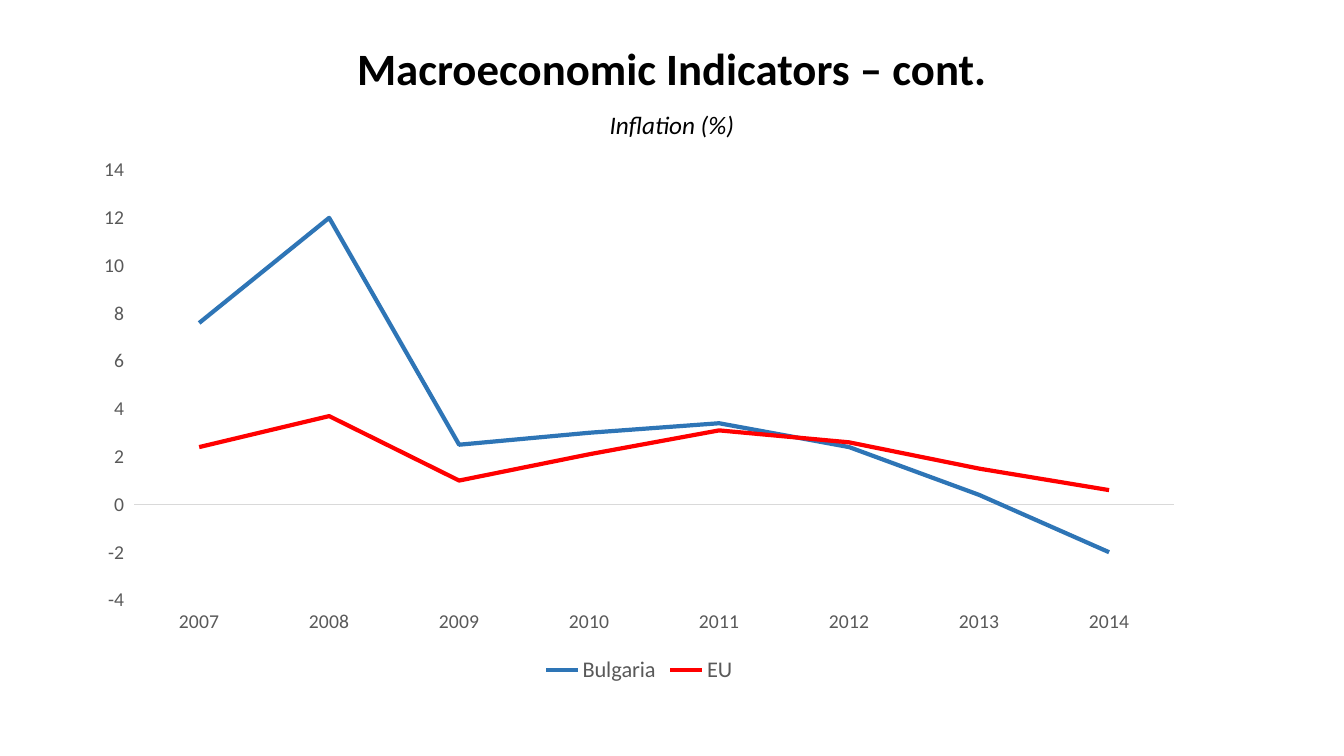
from dataclasses import dataclass

import pptx
import pptx.chart.data
import pptx.dml.color
import pptx.enum.chart
import pptx.enum.text
import pptx.oxml
import pptx.util
from pptx.util import Cm


@dataclass(frozen=True)
class Theme:
    font: str = "Calibri"
    ink: str = "000000"
    label: str = "595959"
    axis: str = "D9D9D9"
    bulgaria: str = "2E75B6"
    eu: str = "FF0000"
    title_size: float = 32
    subtitle_size: float = 18
    axis_size: float = 14
    legend_size: float = 16
    chart_size: float = 10


@dataclass(frozen=True)
class Box:
    left: float
    top: float
    width: float
    height: float


@dataclass(frozen=True)
class Country:
    name: str
    inflation: tuple[float, ...]
    color: str


THEME = Theme()
YEARS = [str(year) for year in range(2007, 2015)]
COUNTRIES = [
    Country("Bulgaria", (7.6, 12, 2.5, 3, 3.4, 2.4, 0.4, -2), THEME.bulgaria),
    Country("EU", (2.4, 3.7, 1, 2.1, 3.1, 2.6, 1.5, 0.6), THEME.eu),
]
TITLE_BOX = Box(2.33, 0.67, 29.21, 2.23)
SUBTITLE_BOX = Box(9.73, 2.77, 14.4, 0.94)
CHART_BOX = Box(2.06, 3.71, 28.09, 13.64)


def rgb(color: str) -> pptx.dml.color.RGBColor:
    return pptx.dml.color.RGBColor.from_string(color)


def format_font(font, size: float, color: str, bold: bool = False, italic: bool = False) -> None:
    font.name = THEME.font
    font.size = pptx.util.Pt(size)
    font.color.rgb = rgb(color)
    font.bold = bold
    font.italic = italic


def write_text(placeholder, text: str, box: Box, *, size: float, anchor,
               line_spacing: float, space_before: float = 0,
               bold: bool = False, italic: bool = False) -> None:
    placeholder.left, placeholder.top = Cm(box.left), Cm(box.top)
    placeholder.width, placeholder.height = Cm(box.width), Cm(box.height)
    frame = placeholder.text_frame
    frame.word_wrap = True
    frame.auto_size = pptx.enum.text.MSO_AUTO_SIZE.NONE
    frame.vertical_anchor = anchor
    paragraph = frame.paragraphs[0]
    paragraph.alignment = pptx.enum.text.PP_ALIGN.CENTER
    paragraph.line_spacing = line_spacing
    paragraph.space_before = pptx.util.Pt(space_before)
    # Plain paragraph: no bullet and no hanging indent
    properties = paragraph._p.get_or_add_pPr()
    properties.set("marL", "0")
    properties.set("indent", "0")
    properties.append(pptx.oxml.parse_xml(
        '<a:buNone xmlns:a="http://schemas.openxmlformats.org/drawingml/2006/main"/>'))
    run = paragraph.add_run()
    run.text = text
    format_font(run.font, size, THEME.ink, bold, italic)


def format_axis(axis) -> None:
    axis.has_major_gridlines = False
    axis.major_tick_mark = pptx.enum.chart.XL_TICK_MARK.NONE
    axis.minor_tick_mark = pptx.enum.chart.XL_TICK_MARK.NONE
    axis.tick_label_position = pptx.enum.chart.XL_TICK_LABEL_POSITION.LOW
    format_font(axis.tick_labels.font, THEME.axis_size, THEME.label)


def add_inflation_chart(slide, countries: list[Country], box: Box) -> None:
    inflation = pptx.chart.data.CategoryChartData()
    inflation.categories = YEARS
    for country in countries:
        inflation.add_series(country.name, country.inflation)
    chart = slide.shapes.add_chart(
        pptx.enum.chart.XL_CHART_TYPE.LINE, Cm(box.left), Cm(box.top),
        Cm(box.width), Cm(box.height), inflation).chart
    chart.has_title = False
    format_font(chart.font, THEME.chart_size, THEME.ink)

    # Lines
    chart.plots[0].vary_by_categories = False
    for series, country in zip(chart.plots[0].series, countries):
        series.smooth = False
        series.marker.style = pptx.enum.chart.XL_MARKER_STYLE.NONE
        series.format.line.color.rgb = rgb(country.color)
        series.format.line.width = pptx.util.Pt(3)

    # Axes
    years, percent = chart.category_axis, chart.value_axis
    format_axis(years)
    years.format.line.color.rgb = rgb(THEME.axis)
    years.format.line.width = pptx.util.Pt(0.75)
    format_axis(percent)
    percent.format.line.fill.background()
    percent.minimum_scale, percent.maximum_scale, percent.major_unit = -4, 14, 2
    percent.tick_labels.number_format = "General"
    percent.tick_labels.number_format_is_linked = False

    # Legend
    chart.has_legend = True
    chart.legend.position = pptx.enum.chart.XL_LEGEND_POSITION.BOTTOM
    chart.legend.include_in_layout = False
    format_font(chart.legend.font, THEME.legend_size, THEME.label)


def main() -> None:
    presentation = pptx.Presentation()
    presentation.slide_width, presentation.slide_height = Cm(33.87), Cm(19.05)
    slide = presentation.slides.add_slide(presentation.slide_layouts[1])

    # Heading
    write_text(slide.shapes.title, "Macroeconomic Indicators – cont.", TITLE_BOX,
               size=THEME.title_size, anchor=pptx.enum.text.MSO_ANCHOR.MIDDLE,
               line_spacing=0.9, bold=True)
    write_text(slide.placeholders[1], "Inflation (%)", SUBTITLE_BOX,
               size=THEME.subtitle_size, anchor=pptx.enum.text.MSO_ANCHOR.TOP,
               line_spacing=0.8, space_before=10, italic=True)

    # Chart
    add_inflation_chart(slide, COUNTRIES, CHART_BOX)
    presentation.save("out.pptx")


if __name__ == "__main__":
    main()
